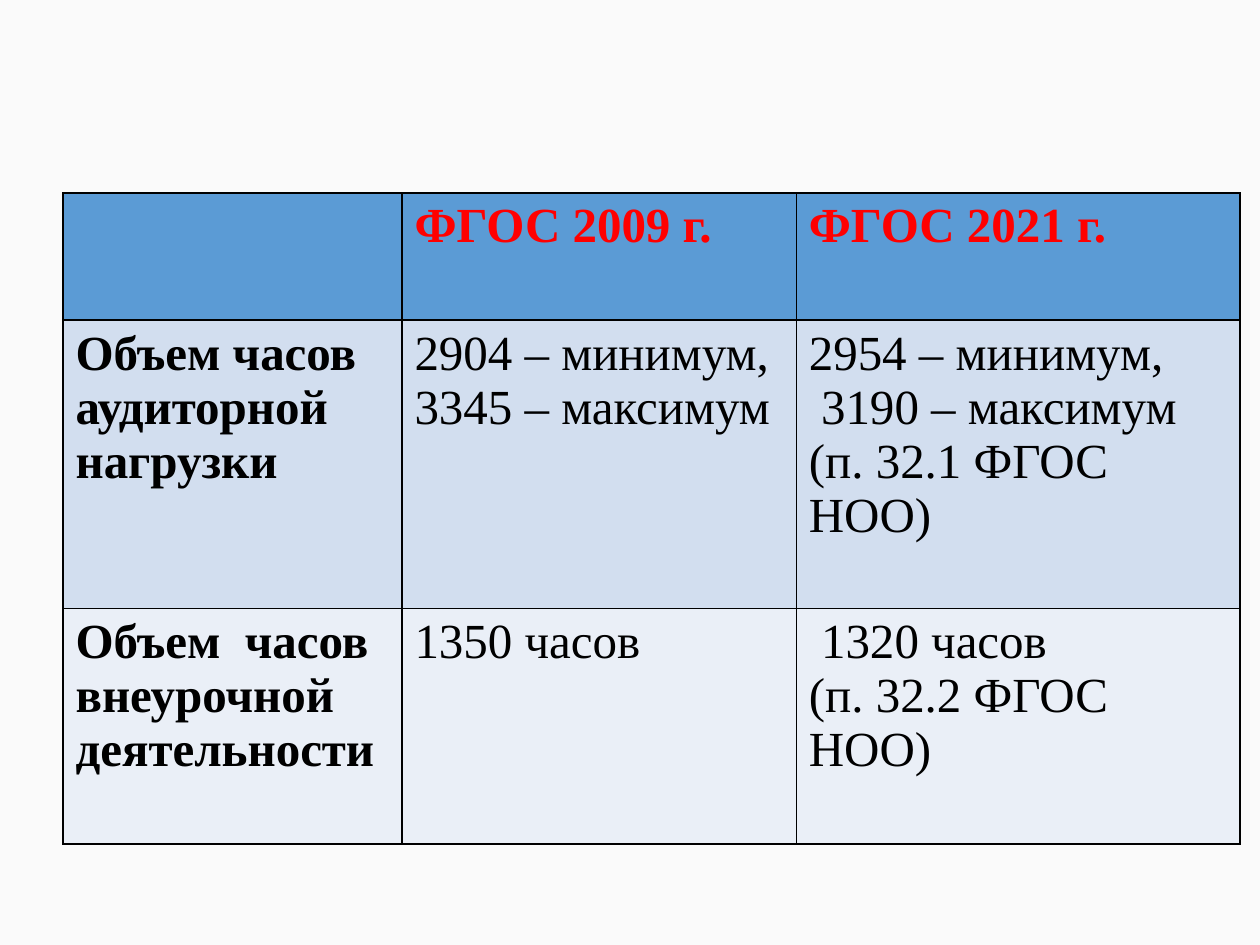
from lxml.etree import SubElement
from pptx import Presentation
from pptx.dml.color import RGBColor
from pptx.oxml.ns import qn
from pptx.util import Inches, Pt

BLACK = "000000"
RED = "FF0000"
HEADER_FILL = "5B9BD5"
COLUMN_WIDTHS = (2.69, 3.13, 3.52)
ROWS = [
    (1.01, HEADER_FILL, ["", "ФГОС 2009 г.", "ФГОС 2021 г."]),
    (2.29, "D2DEEF", [
        "Объем часов аудиторной нагрузки",
        "2904 – минимум,\n3345 – максимум",
        "2954 – минимум,\n 3190 – максимум\v(п. 32.1 ФГОС НОО)",
    ]),
    (1.87, "EAEFF7", [
        "Объем  часов внеурочной деятельности",
        "1350 часов",
        " 1320 часов\v(п. 32.2 ФГОС НОО)",
    ]),
]


def rgb(value):
    return RGBColor.from_string(value)


def write_text(frame, text, size=28, font="Times New Roman", color=BLACK, bold=False):
    frame.text = text
    for paragraph in frame.paragraphs:
        for run in paragraph.runs:
            run.font.size = Pt(size)
            run.font.name = font
            run.font.bold = bold
            run.font.color.rgb = rgb(color)


def draw_borders(cell, color=BLACK, width=1):
    properties = cell._tc.get_or_add_tcPr()
    for position, side in enumerate(("a:lnL", "a:lnR", "a:lnT", "a:lnB")):
        border = properties.makeelement(qn(side), {"w": str(Pt(width))})
        properties.insert(position, border)
        fill = SubElement(border, qn("a:solidFill"))
        SubElement(fill, qn("a:srgbClr"), val=color)


def add_hours_table(slide, left, top, width, height):
    table = slide.shapes.add_table(
        len(ROWS), len(COLUMN_WIDTHS),
        Inches(left), Inches(top), Inches(width), Inches(height),
    ).table
    for column, column_width in zip(table.columns, COLUMN_WIDTHS):
        column.width = Inches(column_width)
    for row_index, (row_height, fill, texts) in enumerate(ROWS):
        table.rows[row_index].height = Inches(row_height)
        is_header = row_index == 0
        for column_index, text in enumerate(texts):
            cell = table.cell(row_index, column_index)
            cell.fill.solid()
            cell.fill.fore_color.rgb = rgb(fill)
            draw_borders(cell)
            write_text(
                cell.text_frame, text,
                color=RED if is_header else BLACK,
                bold=is_header or column_index == 0,
            )


def main():
    presentation = Presentation()
    presentation.slide_width = Inches(10)
    presentation.slide_height = Inches(7.5)
    slide = presentation.slides.add_slide(presentation.slide_layouts[6])
    slide.background.fill.solid()
    slide.background.fill.fore_color.rgb = rgb("FAFAFA")
    row_heights = [row_height for row_height, _, _ in ROWS]
    add_hours_table(slide, 0.5, 1.53, sum(COLUMN_WIDTHS), sum(row_heights))
    presentation.save("out.pptx")


if __name__ == "__main__":
    main()
